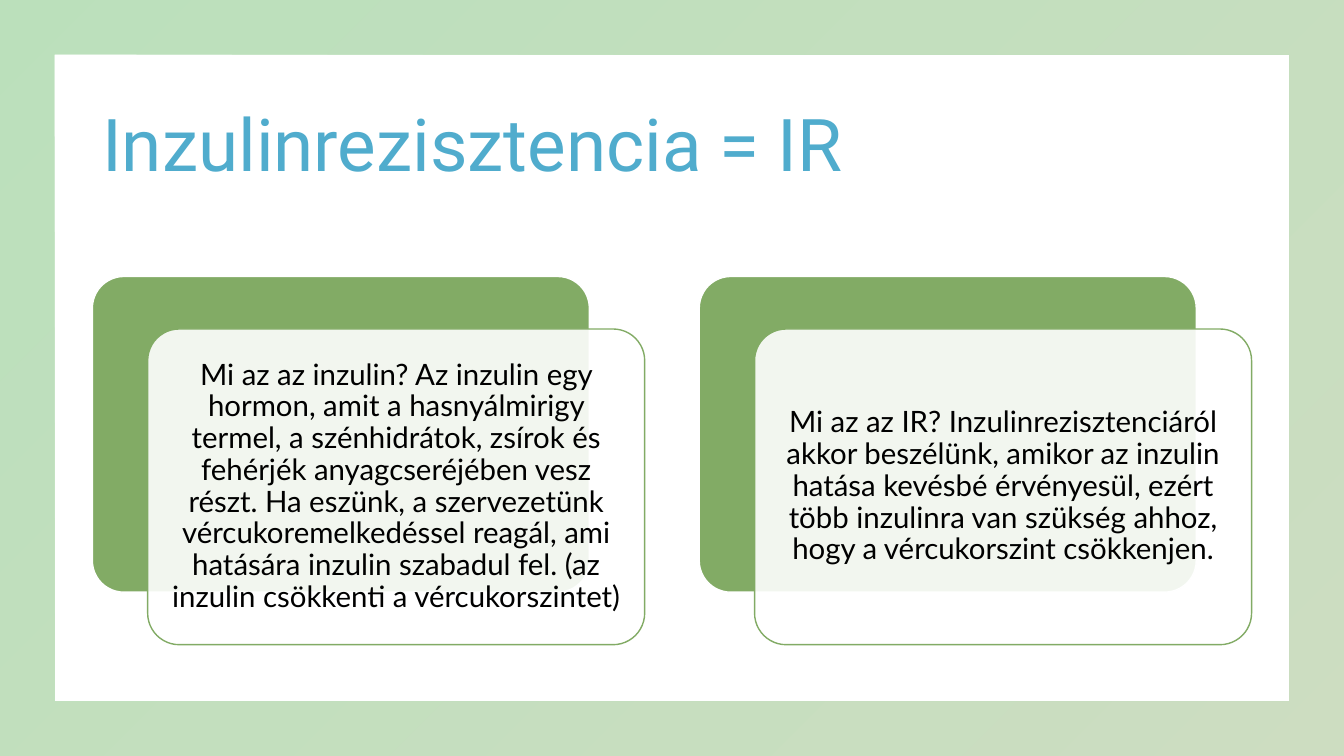
from pptx import Presentation
from pptx.dml.color import RGBColor
from pptx.enum.shapes import MSO_SHAPE as SHAPE
from pptx.enum.text import MSO_ANCHOR as ANCHOR, PP_ALIGN as ALIGN
from pptx.oxml.ns import qn
from pptx.util import Pt
from lxml import etree

COLORS = {"leaf": "56B357", "green": "82AB65", "blue": "50ACCD",
          "white": "FFFFFF", "black": "000000"}
TITLE = {"size": Pt(52), "name": "Roboto"}
BODY = {"size": Pt(21), "name": "Lato"}
CARDS = [
    "Mi az az inzulin? Az inzulin egy hormon, amit a hasnyálmirigy termel, "
    "a szénhidrátok, zsírok és fehérjék anyagcseréjében vesz részt. Ha eszünk, "
    "a szervezetünk vércukoremelkedéssel reagál, ami hatására inzulin szabadul "
    "fel. (az inzulin csökkenti a vércukorszintet)",
    "Mi az az IR? Inzulinrezisztenciáról akkor beszélünk, amikor az inzulin "
    "hatása kevésbé érvényesül, ezért több inzulinra van szükség ahhoz, "
    "hogy a vércukorszint csökkenjen.",
]


def rgb(name):
    return RGBColor.from_string(COLORS[name])


def set_alpha(sp, percent):
    """Make the fill colours of the shape partly transparent."""
    pr = sp._element.spPr
    fill = pr.find(qn("a:gradFill"))
    if fill is None:
        fill = pr.find(qn("a:solidFill"))
    for color in fill.iter(qn("a:srgbClr")):
        etree.SubElement(color, qn("a:alpha"), val=str(percent * 1000))


def write(tf, text, color, fmt, align):
    tf.word_wrap = True
    tf.vertical_anchor = ANCHOR.MIDDLE
    p = tf.paragraphs[0]
    p.alignment, p.line_spacing = align, 0.9
    r = p.add_run()
    r.text = text
    r.font.color.rgb = rgb(color)
    for key, value in fmt.items():
        setattr(r.font, key, value)


def add_frame(s, x, y, w, h):
    sp = s.shapes.add_shape(SHAPE.FRAME, Pt(x), Pt(y), Pt(w), Pt(h))
    sp.shadow.inherit = False
    sp.adjustments[0] = 0.072
    sp.line.fill.background()
    sp.fill.gradient()
    sp.fill.gradient_angle = 315
    for stop, name in zip(sp.fill.gradient_stops, ("leaf", "green")):
        stop.color.rgb = rgb(name)
    set_alpha(sp, 40)


def add_title(s, x, y, w, h):
    tb = s.shapes.add_textbox(Pt(x), Pt(y), Pt(w), Pt(h))
    write(tb.text_frame, "Inzulinrezisztencia = IR", "blue", TITLE, ALIGN.LEFT)


def add_panel(s, x, y, w, h, fill, line):
    sp = s.shapes.add_shape(SHAPE.ROUNDED_RECTANGLE, Pt(x), Pt(y), Pt(w), Pt(h))
    sp.shadow.inherit = False
    sp.adjustments[0] = 0.1
    sp.fill.solid()
    sp.fill.fore_color.rgb = rgb(fill)
    sp.line.color.rgb = rgb(line)
    sp.line.width = Pt(1)
    return sp


def add_card(s, x, y, w, h, text):
    """Green panel with a translucent text panel shifted down and right."""
    dx, dy = 39.5, 37.5
    pw, ph = w - dx, h - dy
    add_panel(s, x, y, pw, ph, "green", "white")
    front = add_panel(s, x + dx, y + dy, pw, ph, "white", "green")
    set_alpha(front, 90)
    tf = front.text_frame
    for side in ("left", "right", "top", "bottom"):
        setattr(tf, f"margin_{side}", Pt(6.5))
    write(tf, text, "black", BODY, ALIGN.CENTER)


def main():
    prs = Presentation()
    prs.slide_width, prs.slide_height = Pt(960), Pt(540)
    s = prs.slides.add_slide(prs.slide_layouts[6])
    add_frame(s, 0, 0, 960, 540)
    add_title(s, 66, 53.5, 828, 104.5)
    card_w, gap = 394.5, 39
    for i, text in enumerate(CARDS):
        add_card(s, 66 + i * (card_w + gap), 197.5, card_w, 263, text)
    prs.save("out.pptx")


if __name__ == "__main__":
    main()
